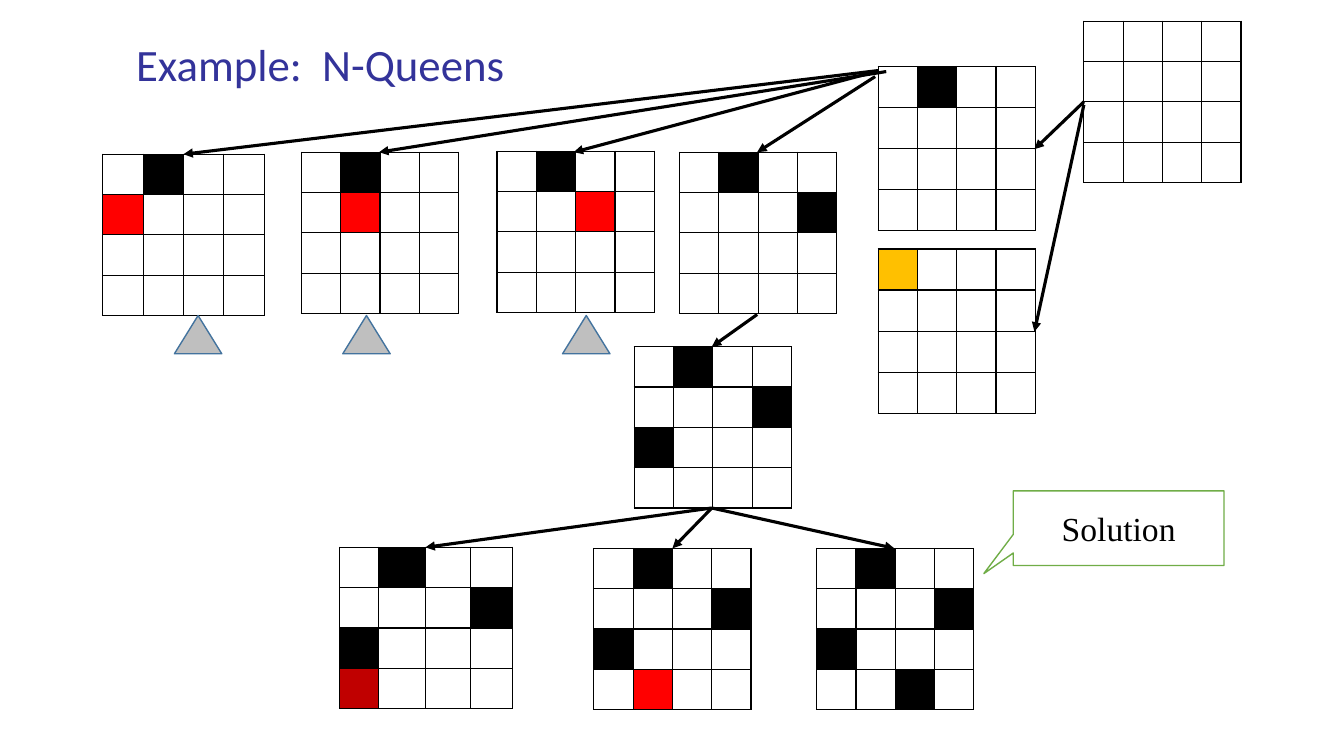
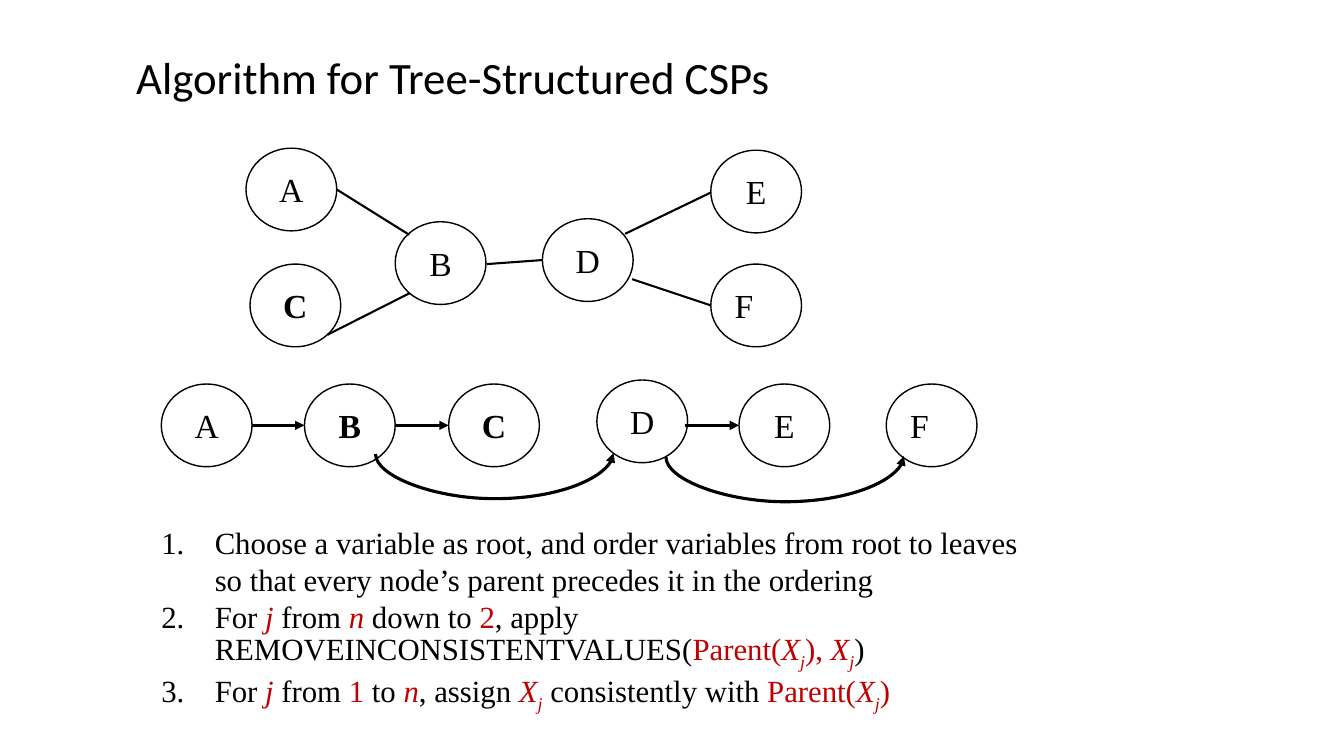
"""Build two slides on constraint search: a queens tree and a tree-shaped graph."""
from dataclasses import dataclass, field
from typing import Any

from lxml import etree
from pptx import Presentation
from pptx.dml.color import RGBColor
from pptx.enum.shapes import MSO_CONNECTOR, MSO_SHAPE
from pptx.enum.text import MSO_ANCHOR, MSO_AUTO_SIZE, PP_ALIGN
from pptx.oxml.ns import qn
from pptx.util import Inches, Pt

BLACK = RGBColor(0, 0, 0)
WHITE = RGBColor(255, 255, 255)
NAVY = RGBColor(0x33, 0x33, 0x9A)
RED = RGBColor(255, 0, 0)
DARK_RED = RGBColor(0xC0, 0, 0)
GOLD = RGBColor(0xFF, 0xC0, 0)
GREEN = RGBColor(0x70, 0xAD, 0x47)
GRAY = RGBColor(0xBF, 0xBF, 0xBF)
BLUE = RGBColor(0x43, 0x73, 0x9E)
STRAIGHT, CURVE = MSO_CONNECTOR.STRAIGHT, MSO_CONNECTOR.CURVE
OVAL, WEDGE = MSO_SHAPE.OVAL, MSO_SHAPE.RECTANGULAR_CALLOUT
CONE = MSO_SHAPE.ISOSCELES_TRIANGLE
LEFT, CENTER = PP_ALIGN.LEFT, PP_ALIGN.CENTER
TOP, MIDDLE = MSO_ANCHOR.TOP, MSO_ANCHOR.MIDDLE
NO_FIT = MSO_AUTO_SIZE.NONE
SERIF, SANS = "Times New Roman", "Calibri"

TITLE_FONT = {"name": SANS, "size": Pt(32), "bold": False}
LABEL_FONT = {"name": SERIF, "size": Pt(24)}
LIST_FONT = {"name": SERIF, "size": Pt(22)}
FRAME = {"word_wrap": True, "auto_size": NO_FIT}
FLAT = {"first_row": False, "horz_banding": False}
NO_PAD = dict.fromkeys(
    ("margin_left", "margin_right", "margin_top", "margin_bottom"), 0)

Point = tuple[float, float]
Marks = dict[Point, RGBColor]


@dataclass
class Board:
    """A four by four board with its marked cells by row and column."""
    left: float
    top: float
    marks: Marks = field(default_factory=dict)
    tall: float = 1.6
    cols: tuple[float, ...] = (0.39,) * 4


@dataclass
class Node:
    """A round node with a letter."""
    text: str
    left: float
    top: float
    bold: bool = False
    pad: float = 0


@dataclass
class Link:
    """A straight line between two points."""
    start: Point
    end: Point
    width: float = 2.25
    head: bool = True


def queens(*cells: Point) -> Marks:
    """Mark the given cells as queens."""
    return dict.fromkeys(cells, BLACK)


ONE = queens((0, 1))
TWO = ONE | queens((1, 3))
THREE = TWO | queens((2, 0))
BOARDS = [
    Board(10.75, 0.21),
    Board(8.71, 0.66, ONE, 1.63),
    Board(8.71, 2.47, {(0, 0): GOLD}, 1.63),
    Board(1.02, 1.53, ONE | {(1, 0): RED}, cols=(0.4,) * 4),
    Board(2.99, 1.51, ONE | {(1, 1): RED}),
    Board(4.93, 1.5, ONE | {(1, 2): RED}),
    Board(6.74, 1.51, TWO),
    Board(6.29, 3.44, THREE),
    Board(3.37, 5.43, THREE | {(3, 0): DARK_RED}, cols=(0.38, 0.47, 0.45, 0.41)),
    Board(5.89, 5.44, THREE | {(3, 1): RED}),
    Board(8.1, 5.44, THREE | queens((3, 2))),
]
FORK = (7.06, 5.04)
MOVES = [
    Link((10.75, 1.01), (10.26, 1.48)),
    Link((10.75, 1.04), (10.26, 3.29)),
    Link((8.71, 0.7), (1.82, 1.53)),
    Link((8.79, 0.71), (3.76, 1.51)),
    Link((8.69, 0.71), (5.69, 1.51)),
    Link((8.68, 0.76), (7.51, 1.51)),
    Link((7.51, 3.12), (7.06, 3.44)),
    *(Link(FORK, end) for end in ((4.22, 5.43), (6.67, 5.44), (8.87, 5.44))),
]
DEAD_ENDS = (1.73, 3.4, 5.58)

NODES = [
    Node("A", 2.44, 1.47), Node("C", 2.48, 2.62, True),
    Node("B", 3.92, 2.2), Node("D", 5.38, 2.17),
    Node("E", 7.05, 1.49), Node("F", 7.05, 2.62, pad=0.24),
    Node("A", 1.6, 3.81), Node("B", 3.02, 3.81, True),
    Node("C", 4.45, 3.81, True), Node("D", 5.92, 3.77),
    Node("E", 7.33, 3.81), Node("F", 8.79, 3.81, pad=0.24),
]
EDGES = [
    *(Link(start, end, 1.5, False) for start, end in (
        ((3.34, 1.88), (4.06, 2.33)), ((3.25, 3.32), (4.06, 2.91)),
        ((4.83, 2.62), (5.38, 2.58)), ((6.27, 2.77), (7.05, 3.03)),
        ((6.2, 2.32), (7.05, 1.91)))),
    *(Link((start, 4.22), (end, 4.22)) for start, end in (
        (2.5, 3.02), (3.92, 4.45), (6.79, 7.33))),
]
ARCS = ((4.9, 3.32), (7.78, 3.35))

PLAIN = {"color": BLACK, "italic": False}
KEY = {"color": DARK_RED, "italic": False}
VAR = {"color": DARK_RED, "italic": True}
SUB = VAR | {"drop": True}
CHILD = (("X", VAR), ("j", SUB))
PARENT = (("Parent(", KEY), *CHILD)
STEPS = (
    (("Choose a variable as root, and order variables from root to leaves\v"
      "so that every node’s parent precedes it in the ordering", PLAIN),),
    (("For ", PLAIN), ("j", VAR), (" from ", PLAIN), ("n", VAR),
     (" down to ", PLAIN), ("2", KEY),
     (", apply\vREMOVEINCONSISTENTVALUES(", PLAIN),
     *PARENT, ("), ", KEY), *CHILD, (")", PLAIN)),
    (("For ", PLAIN), ("j ", VAR), ("from ", PLAIN), ("1", KEY), (" to ", PLAIN),
     ("n", VAR), (", assign ", PLAIN), *CHILD,
     (" consistently with ", PLAIN), *PARENT, (")", KEY)),
)


def apply(target: Any, values: dict[str, Any]) -> None:
    """Set each named value on the target."""
    for name, value in values.items():
        setattr(target, name, value)


def place(shape: Any, left: float, top: float, width: float, height: float) -> None:
    """Move and size a shape in inches."""
    apply(shape, {"left": Inches(left), "top": Inches(top),
                  "width": Inches(width), "height": Inches(height)})


def add_title(slide: Any, text: str, top: float, width: float, color: RGBColor) -> None:
    """Fill the title placeholder."""
    title = slide.shapes.title
    place(title, 1.25, top, width, 0.64)
    apply(title.text_frame, FRAME | {"vertical_anchor": MIDDLE, "text": text})
    line = title.text_frame.paragraphs[0]
    line.alignment = LEFT
    apply(line.font, TITLE_FONT)
    line.font.color.rgb = color


def add_board(slide: Any, board: Board) -> None:
    """Draw a board as a table with black borders."""
    table = slide.shapes.add_table(
        4, 4, Inches(board.left), Inches(board.top),
        Inches(sum(board.cols)), Inches(board.tall)).table
    apply(table, FLAT)
    for col, width in zip(table.columns, board.cols):
        col.width = Inches(width)
    for y, row in enumerate(table.rows):
        row.height = Inches(board.tall / 4)
        for x, cell in enumerate(row.cells):
            apply(cell, NO_PAD)
            props = cell._tc.get_or_add_tcPr()
            for side in ("lnL", "lnR", "lnT", "lnB"):
                edge = etree.SubElement(props, qn(f"a:{side}"), w=str(Pt(1)))
                fill = etree.SubElement(edge, qn("a:solidFill"))
                etree.SubElement(fill, qn("a:srgbClr"), val=str(BLACK))
            cell.fill.solid()
            cell.fill.fore_color.rgb = board.marks.get((y, x), WHITE)


def add_line(slide: Any, link: Link, kind: Any = STRAIGHT) -> Any:
    """Draw a black line, with an arrowhead if asked for."""
    line = slide.shapes.add_connector(
        kind, *(Inches(value) for value in (*link.start, *link.end)))
    line.line.color.rgb = BLACK
    line.line.width = Pt(link.width)
    if link.head:
        etree.SubElement(line.line._get_or_add_ln(), qn("a:tailEnd"), type="triangle")
    etree.SubElement(line._element.spPr, qn("a:effectLst"))
    return line


def add_arc(slide: Any, left: float, top: float) -> None:
    """Draw a curved arrow that hangs below its two ends."""
    line = add_line(slide, Link((left + 0.01, top + 2.36), (left, top)), CURVE)
    props = line._element.spPr
    props.find(qn("a:xfrm")).set("rot", "5400000")
    guides = props.find(qn("a:prstGeom")).get_or_add_avLst()
    etree.SubElement(guides, qn("a:gd"), name="adj1", fmla="val -4500000")


def add_form(slide: Any, kind: Any, box: tuple[float, float, float, float],
             fill: RGBColor, edge: RGBColor) -> Any:
    """Draw a flat preset shape."""
    shape = slide.shapes.add_shape(kind, *(Inches(value) for value in box))
    shape.shadow.inherit = False
    shape.fill.solid()
    shape.fill.fore_color.rgb = fill
    shape.line.color.rgb = edge
    shape.line.width = Pt(1)
    return shape


def add_label(shape: Any, text: str, bold: bool = False, pad: float = 0) -> None:
    """Write a centred label, nudged left by padding."""
    frame = shape.text_frame
    apply(frame, NO_PAD | {"margin_right": Inches(pad), "word_wrap": False,
                           "vertical_anchor": MIDDLE, "text": text})
    line = frame.paragraphs[0]
    line.alignment = CENTER
    apply(line.font, LABEL_FONT | {"bold": bold})
    line.font.color.rgb = BLACK


def add_run(line: Any, text: str, look: dict[str, Any]) -> None:
    """Add one run of list text, with line breaks at each tab mark."""
    for index, part in enumerate(text.split("\v")):
        if index:
            line.add_line_break()
        run = line.add_run()
        run.text = part
        apply(run.font, LIST_FONT | {"italic": look["italic"]})
        run.font.color.rgb = look["color"]
        if look.get("drop"):
            run._r.get_or_add_rPr().set("baseline", "-25000")


def add_steps(slide: Any) -> None:
    """Fill the body placeholder with the numbered steps."""
    body = slide.placeholders[1]
    place(body, 1.5, 5.15, 9.16, 1.95)
    frame = body.text_frame
    apply(frame, FRAME | {"vertical_anchor": TOP})
    for index, step in enumerate(STEPS):
        line = frame.add_paragraph() if index else frame.paragraphs[0]
        apply(line, {"alignment": LEFT, "line_spacing": Pt(26.4),
                     "space_before": Pt(3.6 if index == 2 else 0)})
        props = line._p.get_or_add_pPr()
        apply_indent = {"marL": Inches(0.53), "indent": -Inches(0.53)}
        for name, value in apply_indent.items():
            props.set(name, str(value))
        etree.SubElement(props, qn("a:buFont"), typeface=SERIF)
        etree.SubElement(props, qn("a:buAutoNum"), type="arabicPeriod")
        for text, look in step:
            add_run(line, text, look)


def draw_queens(slide: Any) -> None:
    """Draw the search tree of boards."""
    add_title(slide, "Example:  N-Queens", 0.31, 4.25, NAVY)
    for board in BOARDS:
        add_board(slide, board)
    for move in MOVES:
        add_line(slide, move)
    wedge = add_form(slide, WEDGE, (10.05, 4.87, 2.09, 0.74), WHITE, GREEN)
    wedge.adjustments[0], wedge.adjustments[1] = -0.64, 0.61
    add_label(wedge, "Solution")
    for left in DEAD_ENDS:
        add_form(slide, CONE, (left, 3.13, 0.47, 0.38), GRAY, BLUE)


def draw_graph(slide: Any) -> None:
    """Draw the graph, its ordering and the steps."""
    add_title(slide, "Algorithm for Tree-Structured CSPs", 0.44, 6.55, BLACK)
    for node in NODES:
        shape = add_form(slide, OVAL, (node.left, node.top, 0.9, 0.82), WHITE, BLACK)
        add_label(shape, node.text, node.bold, node.pad)
    for edge in EDGES:
        add_line(slide, edge)
    for left, top in ARCS:
        add_arc(slide, left, top)
    add_steps(slide)


def main() -> None:
    """Build and save the deck."""
    deck = Presentation()
    apply(deck, {"slide_width": Inches(13.33), "slide_height": Inches(7.5)})
    for layout, draw in ((5, draw_queens), (1, draw_graph)):
        draw(deck.slides.add_slide(deck.slide_layouts[layout]))
    deck.save("out.pptx")


if __name__ == "__main__":
    main()
